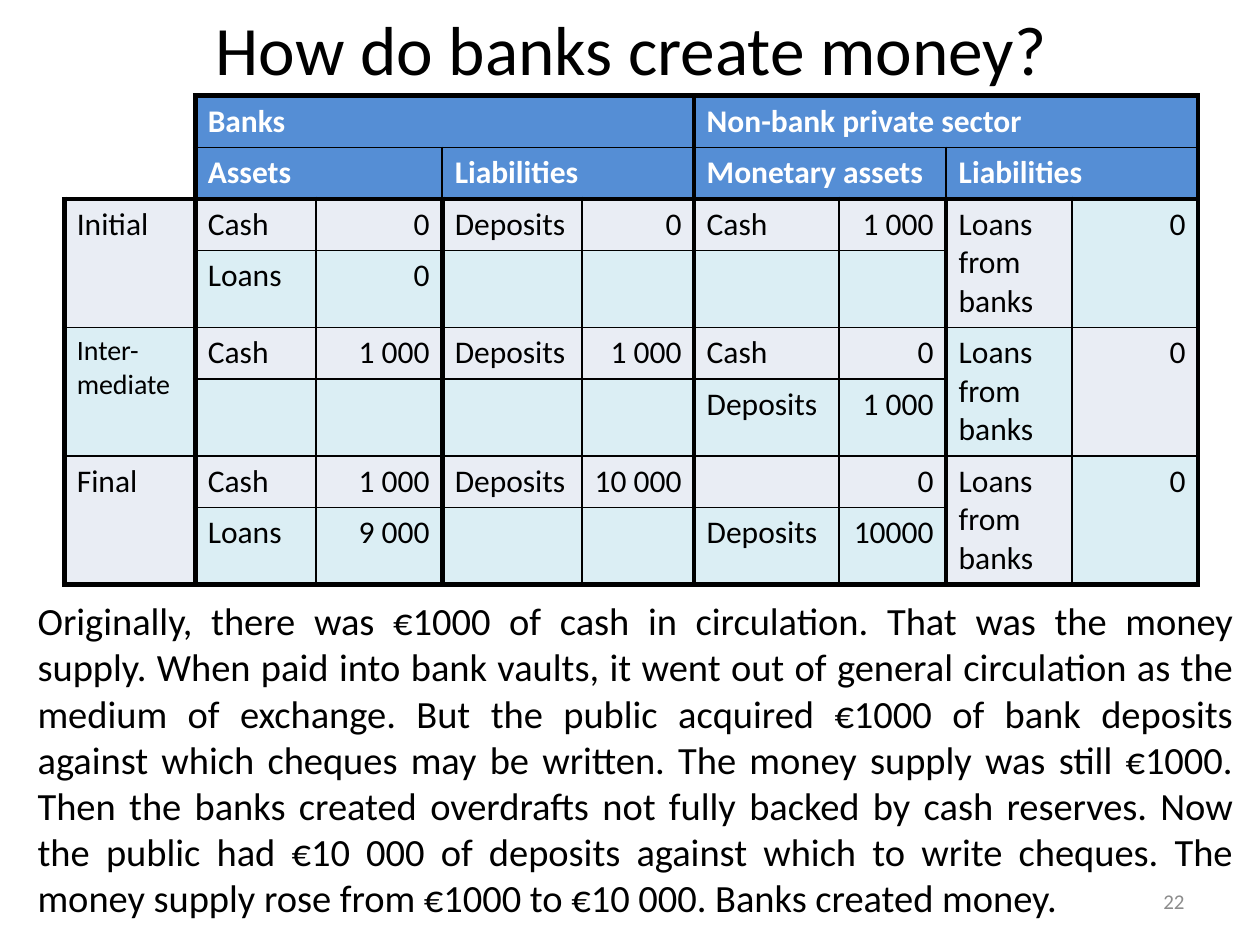
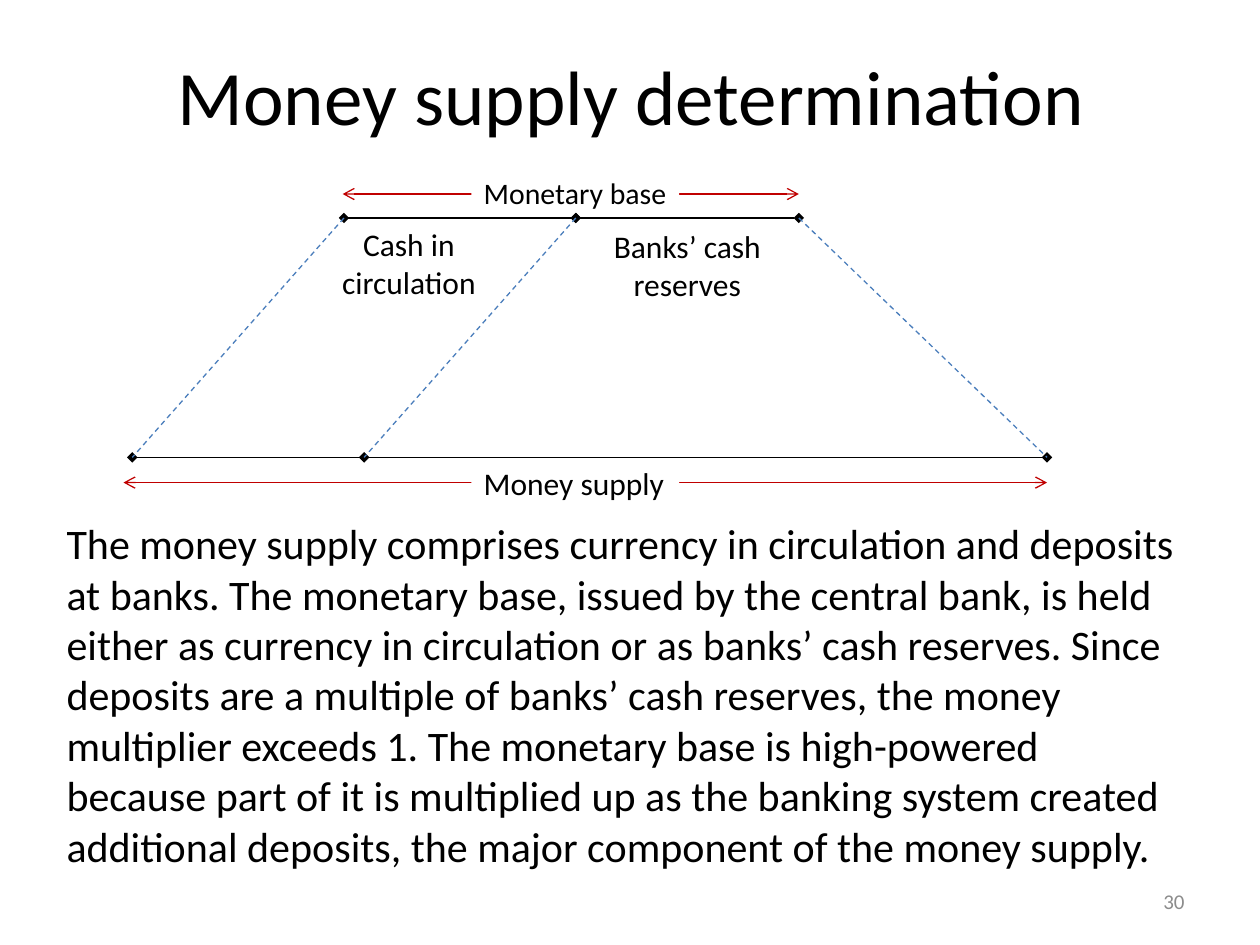
from lxml import etree
from pptx import Presentation
from pptx import util as u
from pptx.dml.color import RGBColor
from pptx.enum import dml, shapes, text
from pptx.oxml import ns

FONT = "Calibri"
BLACK, WHITE, GREY = "000000", "FFFFFF", "8C8C8C"
HEADER_BLUE, RED, DASH_BLUE = "558ED5", "C00000", "4B7EBC"
BANDS = ["E9EDF4", "DBEEF4"]
LEFT, CENTER, RIGHT, JUSTIFY = (
    text.PP_ALIGN.LEFT, text.PP_ALIGN.CENTER, text.PP_ALIGN.RIGHT, text.PP_ALIGN.JUSTIFY)
TOP, MIDDLE = text.MSO_ANCHOR.TOP, text.MSO_ANCHOR.MIDDLE
color = RGBColor.from_string


def write(frame, words, size, ink=BLACK, align=LEFT, anchor=TOP, bold=False):
    """Fill a text frame with one paragraph in the deck's font."""
    frame.text = words
    frame.word_wrap = True
    frame.vertical_anchor = anchor
    para = frame.paragraphs[0]
    para.alignment = align
    for span in para.runs:
        span.font.name = FONT
        span.font.size = u.Pt(size)
        span.font.bold = bold
        span.font.color.rgb = color(ink)
    return para


def add_line(page, start, end, ink, marker=None):
    """Draw a line with the marker at both ends, or dashed without one."""
    line = page.shapes.add_connector(
        shapes.MSO_CONNECTOR.STRAIGHT, *[u.Inches(n) for n in (*start, *end)])
    line.line.color.rgb = color(ink)
    line.line.width = u.Pt(0.75)
    if marker:
        outline = line.line._get_or_add_ln()
        for tag in ("a:headEnd", "a:tailEnd"):
            etree.SubElement(outline, ns.qn(tag), type=marker)
    else:
        line.line.dash_style = dml.MSO_LINE.DASH
    etree.SubElement(line._element.spPr, ns.qn("a:effectLst"))


deck = Presentation()
deck.slide_width, deck.slide_height = u.Inches(10), u.Inches(7.5)

# Titles and page numbers
pages = []
for heading, top, height, size, number in [
    ("How do banks create money?", 0, 0.76, 39.6, "22"),
    ("Money supply determination", 0.13, 1.25, 44, "30"),
]:
    page = deck.slides.add_slide(deck.slide_layouts[5])
    title = page.shapes.title
    title.left, title.top = u.Inches(0.51), u.Inches(top)
    title.width, title.height = u.Inches(9), u.Inches(height)
    write(title.text_frame, heading, size, align=CENTER, anchor=MIDDLE)
    title.text_frame.auto_size = text.MSO_AUTO_SIZE.NONE
    box = page.shapes.add_textbox(u.Inches(7.17), u.Inches(6.95), u.Inches(2.33), u.Inches(0.4))
    write(box.text_frame, number, 12, GREY, RIGHT, MIDDLE)
    pages.append(page)
creation, supply = pages

# Balance sheets
ROWS = [
    ["", "Banks", "", "", "", "Non-bank private sector", "", "", ""],
    ["", "Assets", "", "Liabilities", "", "Monetary assets", "", "Liabilities", ""],
    ["Initial", "Cash", "0", "Deposits", "0", "Cash", "1 000", "Loans from banks", "0"],
    ["", "Loans", "0", "", "", "", "", "", ""],
    ["Inter-mediate", "Cash", "1 000", "Deposits", "1 000", "Cash", "0", "Loans from banks", "0"],
    ["", "", "", "", "", "Deposits", "1 000", "", ""],
    ["Final", "Cash", "1 000", "Deposits", "10 000", "", "0", "Loans from banks", "0"],
    ["", "Loans", "9 000", "", "", "Deposits", "10000", "", ""],
]
WIDTHS = [1.04, 0.96, 1, 1.11, 0.89, 1.15, 0.85, 1, 1]
HEIGHTS = [0.41, 0.41] + [0.41, 0.61] * 3

table = creation.shapes.add_table(
    len(ROWS), len(WIDTHS), u.Inches(0.51), u.Inches(0.76),
    u.Inches(sum(WIDTHS)), u.Inches(sum(HEIGHTS))).table
for column, width in zip(table.columns, WIDTHS):
    column.width = u.Inches(width)
for line, height in zip(table.rows, HEIGHTS):
    line.height = u.Inches(height)
for col in (1, 5):
    table.cell(0, col).merge(table.cell(0, col + 3))
for col in (1, 3, 5, 7):
    table.cell(1, col).merge(table.cell(1, col + 1))
for row in (2, 4, 6):
    for col in (0, 7, 8):
        table.cell(row, col).merge(table.cell(row + 1, col))

for row, values in enumerate(ROWS):
    for col, value in enumerate(values):
        cell = table.cell(row, col)
        header, period = row < 2, (row - 2) // 2
        if not cell.is_spanned:
            write(cell.text_frame, value, 16 if value == "Inter-mediate" else 18,
                  WHITE if header else BLACK,
                  RIGHT if not header and col and col % 2 == 0 else LEFT, bold=header)

        # Thick lines frame each balance sheet; the top left corner stays open
        borders = {}
        for side, edge in (("L", col), ("R", col + cell.span_width)):
            thick = edge in ((1, 5, 9) if header else (0, 1, 3, 5, 7, 9))
            borders[side] = 3 if thick else 0 if edge == 0 else 1
        for side, edge in (("T", row), ("B", row + cell.span_height)):
            thick = edge in (2, 8) or (edge == 0 and col > 0)
            borders[side] = 3 if thick else 0 if col == 0 and edge < 2 else 1
        properties = cell._tc.get_or_add_tcPr()
        for side, points in borders.items():
            border = etree.SubElement(properties, ns.qn(f"a:ln{side}"), w=str(u.Pt(points)))
            if points:
                paint = etree.SubElement(border, ns.qn("a:solidFill"))
                etree.SubElement(paint, ns.qn("a:srgbClr"), val=BLACK)
            else:
                etree.SubElement(border, ns.qn("a:noFill"))

        if header:
            shade = HEADER_BLUE if col else WHITE
        elif col in (0, 7):
            shade = BANDS[period % 2]
        elif col == 8:
            shade = BANDS[1 - period % 2]
        else:
            shade = BANDS[row % 2]
        cell.fill.solid()
        cell.fill.fore_color.rgb = color(shade)

box = creation.shapes.add_textbox(u.Inches(0.2), u.Inches(4.69), u.Inches(9.69), u.Inches(2.69))
write(box.text_frame,
      "Originally, there was €1000 of cash in circulation. That was the money supply. "
      "When paid into bank vaults, it went out of general circulation as the medium of exchange. "
      "But the public acquired €1000 of bank deposits against which cheques may be written. "
      "The money supply was still €1000. Then the banks created overdrafts not fully backed by "
      "cash reserves. Now the public had €10 000 of deposits against which to write cheques. "
      "The money supply rose from €1000 to €10 000. Banks created money.", 22, align=JUSTIFY)

# Money supply explanation
box = supply.shapes.add_textbox(u.Inches(0.43), u.Inches(4.06), u.Inches(9), u.Inches(3.07))
para = write(box.text_frame,
      "The money supply comprises currency in circulation and deposits at banks. "
      "The monetary base, issued by the central bank, is held either as currency in circulation "
      "or as banks’ cash reserves. Since deposits are a multiple of banks’ cash reserves, "
      "the money multiplier exceeds 1. The monetary base is high-powered because part of it is "
      "multiplied up as the banking system created additional deposits, the major component of "
      "the money supply.", 24)
para.space_before = u.Pt(4.8)

# Measured spans with their labels
for words, size, left, right, y in [
    ("Money supply", 18, 0.98, 8.31, 3.83),
    ("Monetary base", 17, 2.72, 6.34, 1.54),
]:
    add_line(supply, (left, y), (right, y), RED, "arrow")
    label = supply.shapes.add_shape(
        shapes.MSO_SHAPE.RECTANGLE, u.Inches(3.74), u.Inches(y - 0.2), u.Inches(1.65), u.Inches(0.4))
    label.shadow.inherit = False
    label.fill.solid()
    label.fill.fore_color.rgb = color(WHITE)
    label.line.fill.background()
    write(label.text_frame, words, size)

# The monetary base above, the money supply below, joined point by point
BASE_Y, SUPPLY_Y = 1.73, 3.63
base_points = [(x, BASE_Y) for x in (2.73, 4.57, 6.34)]
supply_points = [(x, SUPPLY_Y) for x in (1.05, 2.89, 8.31)]
for points in (base_points, supply_points):
    for start, end in zip(points, points[1:]):
        add_line(supply, start, end, BLACK, "diamond")
for start, end in zip(base_points, supply_points):
    add_line(supply, start, end, DASH_BLUE)

for words, left, top in [("Banks’ cash reserves", 4.61, 1.75), ("Cash in circulation", 2.4, 1.74)]:
    box = supply.shapes.add_textbox(u.Inches(left), u.Inches(top), u.Inches(1.69), u.Inches(0.71))
    write(box.text_frame, words, 18, align=CENTER)

deck.save("out.pptx")
